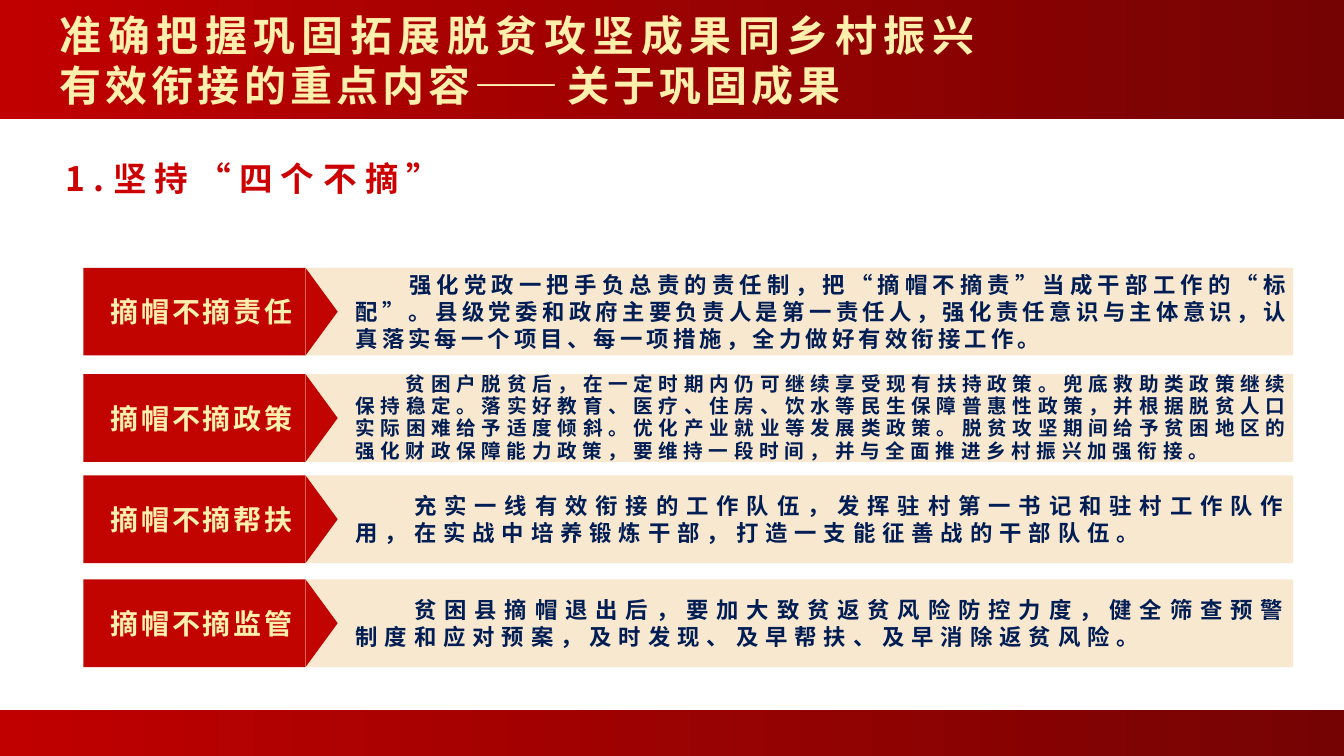
from dataclasses import dataclass

from pptx import Presentation
from pptx.dml.color import RGBColor
from pptx.enum.shapes import MSO_SHAPE as Form
from pptx.enum.text import MSO_ANCHOR as Anchor, MSO_AUTO_SIZE as Fit, PP_ALIGN as Align
from pptx.oxml.ns import qn
from pptx.util import Cm, Pt
from lxml.etree import SubElement


@dataclass(frozen=True)
class Theme:
    face: str = "Noto Sans CJK SC"
    red: str = "C20400"
    head: str = "CC0000"
    cream: str = "F9E8D0"
    navy: str = "001D54"
    band: tuple = ((0, "C00000"), (1, "760303"))
    gold: tuple = ((0.49, "FEEFAC"), (1, "E9BE61"))
    title: int = 30
    sub: int = 24
    label: int = 20


class Deck:
    def __init__(self, theme):
        self.theme = theme
        self.prs = Presentation()
        self.prs.slide_width, self.prs.slide_height = Cm(33.87), Cm(19.05)
        self.slide = self.prs.slides.add_slide(self.prs.slide_layouts[5])

    def paint(self, fill, color, angle=0):
        """Fill with one colour, or with a gradient of two stops."""
        if isinstance(color, str):
            fill.solid()
            fill.fore_color.rgb = RGBColor.from_string(color)
            return
        fill.gradient()
        fill.gradient_angle = angle
        for stop, (pos, tone) in zip(fill.gradient_stops, color):
            stop.position = pos
            stop.color.rgb = RGBColor.from_string(tone)

    def shape(self, box, color, form=Form.RECTANGLE, turn=0, host=None):
        item = (host or self.slide).shapes.add_shape(form, *map(Cm, box))
        item.rotation = turn
        item.shadow.inherit = False
        item.line.fill.background()
        self.paint(item.fill, color)

    def style(self, frame, text, size, color, gap, align, indent=0, lead=None):
        frame.vertical_anchor = Anchor.MIDDLE
        para = frame.paragraphs[0]
        para.text = text
        para.alignment = align
        if lead:
            para.line_spacing = lead
        if indent:
            props = para._p.get_or_add_pPr()
            props.set("marL", "0")
            props.set("indent", str(Cm(indent)))
        font = para.font
        font.size, font.bold, font.name = Pt(size), True, self.theme.face
        self.paint(font.fill, color, 270)
        font._element.set("spc", str(gap * 100))
        SubElement(font._element, qn("a:ea")).set("typeface", self.theme.face)

    def text(self, box, *look, host=None, wrap=True, **more):
        frame = (host or self.slide).shapes.add_textbox(*map(Cm, box)).text_frame
        frame.word_wrap = wrap
        self.style(frame, *look, **more)

    def title(self, box, text):
        item = self.slide.shapes.title
        item.left, item.top, item.width, item.height = map(Cm, box)
        self.slide.shapes._spTree.append(item._element)
        frame = item.text_frame
        frame.word_wrap, frame.auto_size = True, Fit.NONE
        frame.margin_left, frame.margin_right = Cm(1.5), Cm(0.2)
        frame.margin_top = frame.margin_bottom = Cm(0.1)
        self.style(frame, text, self.theme.title, self.theme.gold, 3, Align.JUSTIFY)

    def row(self, top, label, body, size, gap, indent, lead=None):
        look, high, tip = self.theme, 2.21, 0.81
        host = self.slide.shapes.add_group_shape()
        self.shape((7.59, top, 25, high), look.cream, host=host)
        self.shape((2.1, top, 5.6, high), look.red, host=host)
        # The tip is a triangle turned to point right from the label's edge
        self.shape((7.7 + (tip - high) / 2, top + (high - tip) / 2, high, tip),
                   look.red, Form.ISOSCELES_TRIANGLE, 90, host)
        self.text((2.49, top + 0.11, 5.18, 1.98), label, look.label, look.gold,
                  2, Align.CENTER, host=host)
        self.text((8.71, top, 24.08, high), body, size, look.navy, gap,
                  Align.JUSTIFY, indent, lead, host=host)


ROWS = [
    (6.75, "摘帽不摘责任", "强化党政一把手负总责的责任制，把“摘帽不摘责”当成干部工作的“标配”。县级党委和政府主要负责人是第一责任人，强化责任意识与主体意识，认真落实每一个项目、每一项措施，全力做好有效衔接工作。", 16, 3, 1.35),
    (9.43, "摘帽不摘政策", "贫困户脱贫后，在一定时期内仍可继续享受现有扶持政策。兜底救助类政策继续保持稳定。落实好教育、医疗、住房、饮水等民生保障普惠性政策，并根据脱贫人口实际困难给予适度倾斜。优化产业就业等发展类政策。脱贫攻坚期间给予贫困地区的强化财政保障能力政策，要维持一段时间，并与全面推进乡村振兴加强衔接。", 14, 4, 1.27, 0.95),
    (11.98, "摘帽不摘帮扶", "充实一线有效衔接的工作队伍，发挥驻村第一书记和驻村工作队作用，在实战中培养锻炼干部，打造一支能征善战的干部队伍。", 16, 5, 1.48),
    (14.6, "摘帽不摘监管", "贫困县摘帽退出后，要加大致贫返贫风险防控力度，健全筛查预警制度和应对预案，及时发现、及早帮扶、及早消除返贫风险。", 16, 5, 1.48),
]


def main():
    theme = Theme()
    deck = Deck(theme)

    # Top and bottom bands
    for top, high in ((0, 3), (17.9, 1.15)):
        deck.shape((0, top, 33.87, high), theme.band)

    # Title and heading
    deck.title((0, 0.2, 24.87, 2.6), "准确把握巩固拓展脱贫攻坚成果同乡村振兴有效衔接的重点内容——关于巩固成果")
    deck.text((1.4, 3.66, 10.24, 1.47), "1.坚持“四个不摘”", theme.sub, theme.head,
              6, Align.LEFT, lead=1.2, wrap=False)

    # Four labelled rows
    for row in ROWS:
        deck.row(*row)

    deck.prs.save("out.pptx")


if __name__ == "__main__":
    main()
